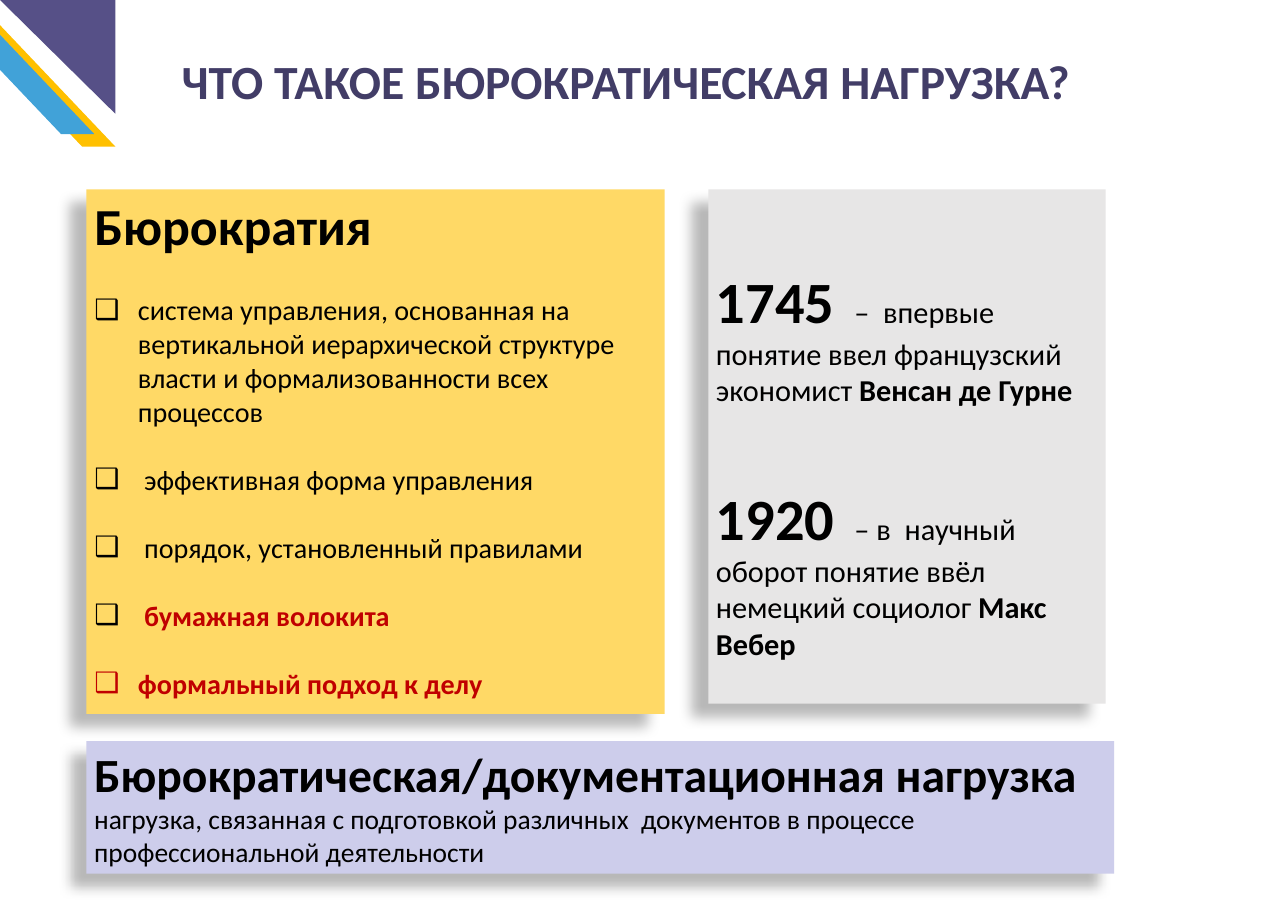
from dataclasses import dataclass

from lxml import etree
from pptx import Presentation
from pptx.dml.color import RGBColor
from pptx.enum.shapes import MSO_SHAPE
from pptx.enum.text import MSO_ANCHOR, MSO_AUTO_SIZE, PP_ALIGN
from pptx.oxml.ns import qn
from pptx.util import Inches, Pt

PARALLELOGRAM = MSO_SHAPE.PARALLELOGRAM
RIGHT_TRIANGLE = MSO_SHAPE.RIGHT_TRIANGLE
RECTANGLE = MSO_SHAPE.RECTANGLE
TOP = MSO_ANCHOR.TOP
LEFT = PP_ALIGN.LEFT
NO_AUTOFIT = MSO_AUTO_SIZE.NONE

FONT = "Calibri"
TITLE_AND_CONTENT = 1
COLORS = {
    "amber": "FFC000", "blue": "41A2D8", "violet": "565087",
    "title": "423D67", "yellow": "FFD966", "gray": "E7E6E6",
    "lilac": "CDCDEB", "black": "000000", "red": "C00000",
}
FRAME_FORMAT = {
    "word_wrap": True, "auto_size": NO_AUTOFIT, "vertical_anchor": TOP,
    "margin_left": Inches(0.1), "margin_right": Inches(0.1),
    "margin_top": Inches(0.05), "margin_bottom": Inches(0.05),
}


@dataclass
class Run:
    text: str
    size: float
    bold: bool = False
    color: str = "black"


@dataclass
class Para:
    runs: list[Run]
    space_before: float = 0
    bullet_color: str = ""
    indent: float = 0


@dataclass
class Box:
    left: float
    top: float
    width: float
    height: float


@dataclass
class CornerShape:
    kind: int
    box: Box
    color: str
    flips: tuple[str, ...]
    slant: float | None = None


CORNER = [
    CornerShape(PARALLELOGRAM, Box(-0.79, -0.06, 2.27, 1.94), "amber", ("flipH",), 0.95),
    CornerShape(PARALLELOGRAM, Box(-1.06, -0.22, 2.27, 1.94), "blue", ("flipH",), 0.95),
    CornerShape(RIGHT_TRIANGLE, Box(0, 0, 1.48, 1.46), "violet", ("flipH", "flipV")),
]


def meaning(text: str, color: str = "black", bullet_color: str = "black",
            indent: float = 0.64, gap: float = 31.7) -> Para:
    """One bulleted meaning of the word."""
    return Para([Run(text, 26, color == "red", color)], gap, bullet_color, indent)


def milestone(year: str, event: str, person: str, gap: float = 0) -> Para:
    return Para([Run(f"{year} ", 54, True), Run(event, 28), Run(person, 28, True)], gap)


TITLE = [Para([Run("ЧТО ТАКОЕ БЮРОКРАТИЧЕСКАЯ НАГРУЗКА?", 44, True, "title")])]
BUREAUCRACY = [
    Para([Run("Бюрократия", 48, True)]),
    meaning("система управления, основанная на вертикальной иерархической "
            "структуре власти и формализованности всех процессов",
            indent=0.56, gap=34.2),
    meaning("эффективная форма управления"),
    meaning("порядок, установленный правилами"),
    meaning("бумажная волокита", "red"),
    meaning("формальный подход к делу", "red", "red", 0.56),
]
HISTORY = [
    milestone("1745", " –  впервые понятие ввел французский экономист ",
              "Венсан де Гурне"),
    milestone("1920", " – в  научный оборот понятие ввёл немецкий социолог ",
              "Макс Вебер", 68.4),
]
WORKLOAD = [
    Para([Run("Бюрократическая/документационная нагрузка", 44, True)]),
    Para([Run("нагрузка, связанная с подготовкой различных  документов в процессе "
              "профессиональной деятельности", 25.4)]),
]


def rgb(color: str) -> RGBColor:
    return RGBColor.from_string(COLORS[color])


def inches(box: Box) -> list[int]:
    return [Inches(n) for n in (box.left, box.top, box.width, box.height)]


def place(shape, box: Box) -> None:
    shape.left, shape.top, shape.width, shape.height = inches(box)


def paint(shape, color: str) -> None:
    shape.fill.solid()
    shape.fill.fore_color.rgb = rgb(color)
    shape.line.fill.background()
    shape.shadow.inherit = False


def cast_shadow(shape) -> None:
    """Soft shadow falling to the lower left."""
    effects = shape.element.spPr.find(qn("a:effectLst"))
    shadow = etree.SubElement(
        effects, qn("a:outerShdw"), blurRad=str(Pt(11.8)), dist=str(Pt(19.7)),
        dir=str(141 * 60000), algn="tr", rotWithShape="0")
    tint = etree.SubElement(shadow, qn("a:srgbClr"), val=COLORS["black"])
    etree.SubElement(tint, qn("a:alpha"), val="28000")


def set_bullet(paragraph, para: Para) -> None:
    props = paragraph._p.get_or_add_pPr()
    props.set("marL", str(Inches(para.indent)))
    props.set("indent", str(-Inches(para.indent)))
    if para.bullet_color:
        tint = etree.SubElement(props, qn("a:buClr"))
        etree.SubElement(tint, qn("a:srgbClr"), val=COLORS[para.bullet_color])
        etree.SubElement(props, qn("a:buChar"), char="❑")
    else:
        etree.SubElement(props, qn("a:buNone"))


def write(shape, paras: list[Para], **margins: int) -> None:
    frame = shape.text_frame
    for name, value in (FRAME_FORMAT | margins).items():
        setattr(frame, name, value)
    for index, para in enumerate(paras):
        paragraph = frame.add_paragraph() if index else frame.paragraphs[0]
        set_bullet(paragraph, para)
        paragraph.alignment = LEFT
        paragraph.space_before = Pt(para.space_before)
        for part in para.runs:
            run = paragraph.add_run()
            run.text = part.text
            run.font.color.rgb = rgb(part.color)
            font_format = {"name": FONT, "size": Pt(part.size), "bold": part.bold}
            for name, value in font_format.items():
                setattr(run.font, name, value)


def draw_corner(slide) -> None:
    for piece in CORNER:
        shape = slide.shapes.add_shape(piece.kind, *inches(piece.box))
        paint(shape, piece.color)
        if piece.slant is not None:
            shape.adjustments[0] = piece.slant
        for flip in piece.flips:
            shape.element.spPr.xfrm.set(flip, "1")


def fill_panel(panel, color: str, paras: list[Para], **margins: int) -> None:
    paint(panel, color)
    cast_shadow(panel)
    write(panel, paras, **margins)


def main() -> None:
    deck = Presentation()
    deck.slide_width, deck.slide_height = Inches(16.53), Inches(11.69)
    slide = deck.slides.add_slide(deck.slide_layouts[TITLE_AND_CONTENT])
    draw_corner(slide)

    title, bureaucracy = slide.placeholders
    place(title, Box(2.33, 0.62, 11.58, 0.84))
    write(title, TITLE, margin_left=0)
    place(bureaucracy, Box(1.11, 2.43, 7.42, 6.73))
    fill_panel(bureaucracy, "yellow", BUREAUCRACY)

    history = slide.shapes.add_shape(RECTANGLE, *inches(Box(9.09, 2.43, 5.1, 6.6)))
    fill_panel(history, "gray", HISTORY, margin_top=Inches(0.97))
    workload = slide.shapes.add_shape(RECTANGLE, *inches(Box(1.11, 9.51, 13.19, 1.7)))
    fill_panel(workload, "lilac", WORKLOAD)

    deck.save("out.pptx")


if __name__ == "__main__":
    main()
